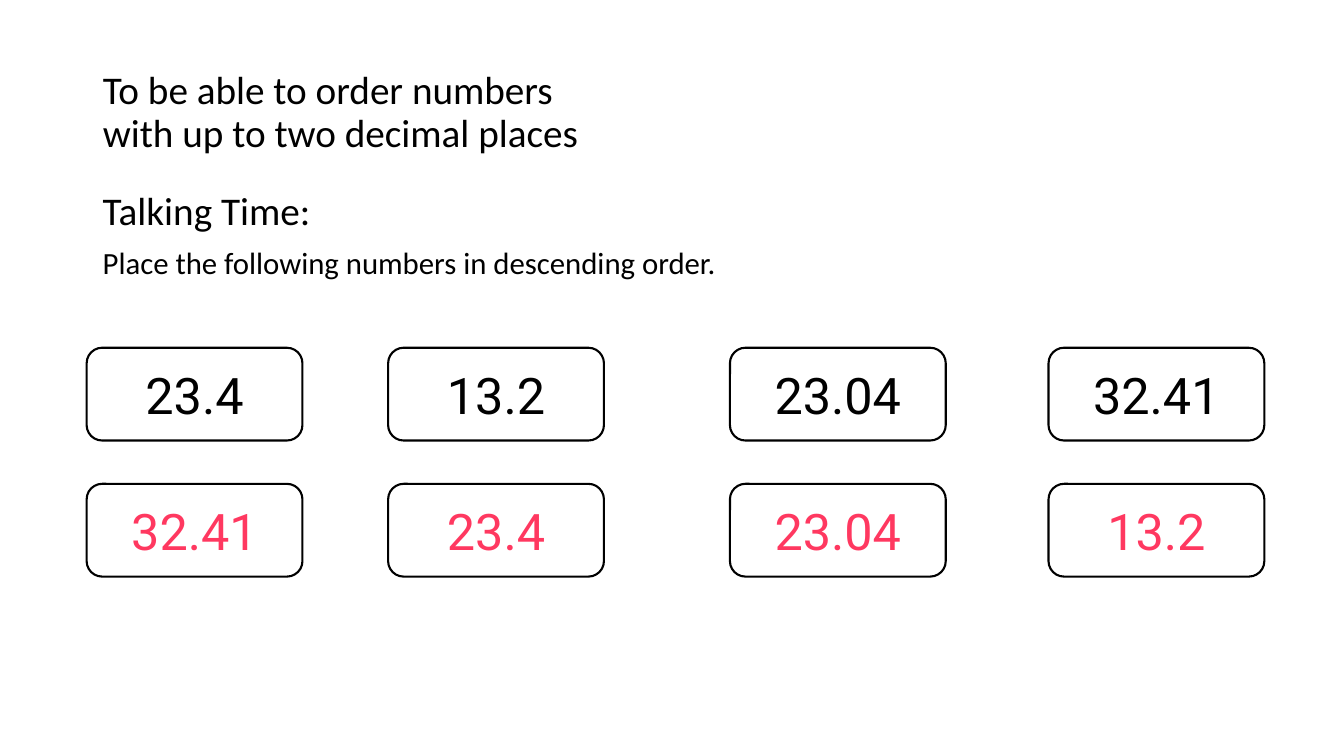
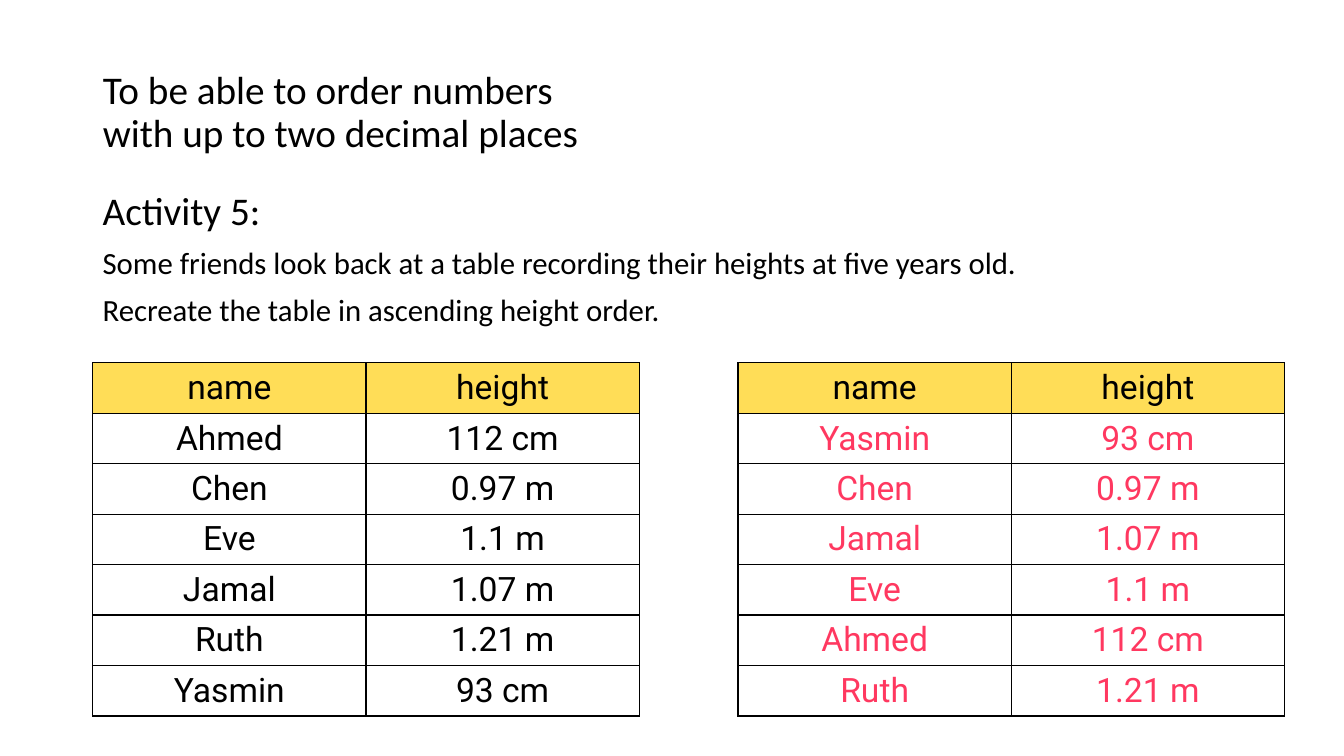
from lxml import etree
from pptx import Presentation
from pptx import util as u
from pptx.dml.color import RGBColor
from pptx.enum import shapes, text
from pptx.oxml import ns

COLORS = {"ink": "000000", "answer": "FF3860", "header": "FFDD57", "paper": "FFFFFF"}
HEAD_FONT, NUMBER_FONT = "Calibri", "Roboto"
TITLE_LINES = ("To be able to order numbers", "with up to two decimal places")
LEFT, WIDTH = 0.92, 11.5
CARD_LEFTS = (0.86, 3.85, 7.24, 10.4)
CARD_W, CARD_H = 2.14, 0.92
ROW_H = 0.49

HEIGHTS = {
    "Ahmed": "112 cm",
    "Chen": "0.97 m",
    "Eve": "1.1 m",
    "Jamal": "1.07 m",
    "Ruth": "1.21 m",
    "Yasmin": "93 cm",
}
ASCENDING = ("Yasmin", "Chen", "Jamal", "Eve", "Ahmed", "Ruth")


def rgb(name):
    """Return the named colour."""
    return RGBColor.from_string(COLORS[name])


def add_run(p, words, size, font, color="ink"):
    """Add one formatted run to a paragraph."""
    r = p.add_run()
    r.text = words
    r.font.size = u.Pt(size)
    r.font.name = font
    r.font.color.rgb = rgb(color)


def center_text(tf, words, size, color):
    """Write one centred line in the number font."""
    p = tf.paragraphs[0]
    p.alignment = text.PP_ALIGN.CENTER
    add_run(p, words, size, NUMBER_FONT, color)


def add_title(s):
    """Place the shared two-line lesson title."""
    sp = s.shapes.title
    sp.left, sp.top = u.Inches(LEFT), u.Inches(0.4)
    sp.width, sp.height = u.Inches(WIDTH), u.Inches(1.45)
    tf = sp.text_frame
    tf.auto_size = text.MSO_AUTO_SIZE.NONE
    tf.vertical_anchor = text.MSO_ANCHOR.MIDDLE
    p = tf.paragraphs[0]
    p.alignment = text.PP_ALIGN.LEFT
    p.line_spacing = 0.9
    for i, line in enumerate(TITLE_LINES):
        if i:
            p.add_line_break()
        add_run(p, line, 28, HEAD_FONT)


def add_task(s, heading, instructions):
    """Place the task heading and its instructions below the title."""
    sp = s.shapes.add_textbox(u.Inches(LEFT), u.Inches(1.85), u.Inches(WIDTH), u.Inches(1.55))
    tf = sp.text_frame
    tf.word_wrap = True
    for i, line in enumerate((heading, *instructions)):
        p = tf.add_paragraph() if i else tf.paragraphs[0]
        p.line_spacing = 0.9
        p.space_before = u.Pt(10)
        add_run(p, line, 22 if i else 28, HEAD_FONT)


def add_lesson_slide(prs, heading, *instructions):
    """Add a slide with the shared title and a task."""
    s = prs.slides.add_slide(prs.slide_layouts[5])
    add_title(s)
    add_task(s, heading, instructions)
    return s


def add_card_row(s, top, numbers, color):
    """Place a row of rounded number cards."""
    for left, number in zip(CARD_LEFTS, numbers):
        sp = s.shapes.add_shape(
            shapes.MSO_SHAPE.ROUNDED_RECTANGLE,
            u.Inches(left), u.Inches(top), u.Inches(CARD_W), u.Inches(CARD_H),
        )
        sp.shadow.inherit = False
        sp.fill.solid()
        sp.fill.fore_color.rgb = rgb("paper")
        sp.line.color.rgb = rgb("ink")
        sp.line.width = u.Pt(1.5)
        sp.text_frame.vertical_anchor = text.MSO_ANCHOR.MIDDLE
        center_text(sp.text_frame, number, 36, color)


def set_borders(cell):
    """Draw a thin line on all four sides of a cell."""
    tc_pr = cell._tc.get_or_add_tcPr()
    for i, side in enumerate(("lnL", "lnR", "lnT", "lnB")):
        ln = etree.Element(ns.qn(f"a:{side}"), w=str(u.Pt(1)))
        fill = etree.SubElement(ln, ns.qn("a:solidFill"))
        etree.SubElement(fill, ns.qn("a:srgbClr"), val=COLORS["ink"])
        tc_pr.insert(i, ln)


def add_height_table(s, left, top, width, names, color):
    """Place a table of names and heights in the given order."""
    rows = [("name", "height")] + [(name, HEIGHTS[name]) for name in names]
    table = s.shapes.add_table(
        len(rows), 2, u.Inches(left), u.Inches(top), u.Inches(width), u.Inches(ROW_H * len(rows))
    ).table
    table.first_row = table.horz_banding = False
    for i, values in enumerate(rows):
        table.rows[i].height = u.Inches(ROW_H)
        for j, value in enumerate(values):
            cell = table.cell(i, j)
            cell.fill.solid()
            cell.fill.fore_color.rgb = rgb("paper" if i else "header")
            cell.vertical_anchor = text.MSO_ANCHOR.MIDDLE
            center_text(cell.text_frame, value, 24, color if i else "ink")
            set_borders(cell)


def main():
    """Build and save the lesson slides."""
    prs = Presentation()
    prs.slide_width, prs.slide_height = u.Inches(13.33), u.Inches(7.5)

    s = add_lesson_slide(prs, "Talking Time:", "Place the following numbers in descending order.")
    numbers = ("23.4", "13.2", "23.04", "32.41")
    add_card_row(s, 3.45, numbers, "ink")
    add_card_row(s, 4.8, sorted(numbers, key=float, reverse=True), "answer")

    s = add_lesson_slide(
        prs,
        "Activity 5:",
        "Some friends look back at a table recording their heights at five years old.",
        "Recreate the table in ascending height order.",
    )
    add_height_table(s, 0.92, 3.6, 5.42, HEIGHTS, "ink")
    add_height_table(s, 7.32, 3.6, 5.42, ASCENDING, "answer")

    prs.save("out.pptx")


if __name__ == "__main__":
    main()
